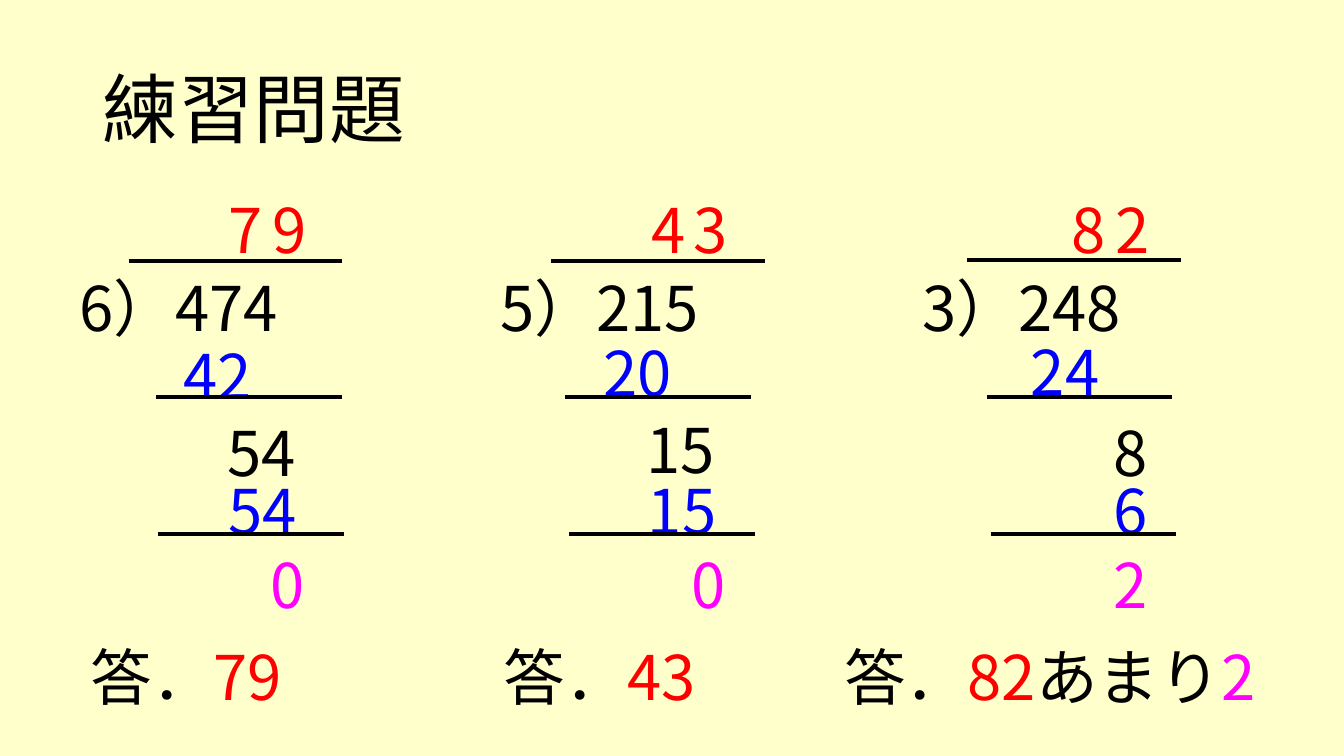
from dataclasses import dataclass

from lxml import etree
from pptx import Presentation
from pptx.dml.color import RGBColor
from pptx.enum import shapes, text
from pptx.oxml import ns
from pptx.util import Cm, Pt


@dataclass(frozen=True)
class Theme:
    font: str = "Noto Sans CJK JP"
    paper: str = "FFFFCC"
    ink: str = "000000"
    quotient: str = "FF0000"
    product: str = "0000FF"
    remainder: str = "FF00FF"
    title_size: int = 54
    work_size: int = 44
    rule_width: int = 3


THEME = Theme()
BOX_HEIGHT = 2.82
COLUMN_LEFT, COLUMN_PITCH = 1.75, 10.62
QUOTIENT_TOP, DIVIDEND_TOP, SECOND_PRODUCT_TOP = 3.78, 5.74, 10.87
REMAINDER_TOP, ANSWER_TOP = 12.73, 15.04
RULE_LENGTHS = (5.38, 4.67, 4.67)

PROBLEMS = [
    {
        "division": "6）474",
        "quotient": [("7", 5.51), ("9", 6.63)],
        "product": ("42", 4.37, 7.47),
        "difference": ("54", 5.49, 9.4),
        "second_product": ("54", 5.51),
        "remainder": ("0", 6.58),
        "rules": [(3.25, 6.58), (3.94, 10.01), (3.99, 13.46)],
        "answer": (2.03, 5.94, [("79", THEME.quotient)]),
    },
    {
        "division": "5）215",
        "quotient": [("4", 16.18), ("3", 17.22)],
        "product": ("20", 14.96, 7.39),
        "difference": ("15", 16.05, 9.32),
        "second_product": ("15", 16.08),
        "remainder": ("0", 17.17),
        "rules": [(13.89, 6.58), (14.25, 10.01), (14.35, 13.46)],
        "answer": (12.45, 5.92, [("43", THEME.quotient)]),
    },
    {
        "division": "3）248",
        "quotient": [("8", 26.75), ("2", 27.86)],
        "product": ("24", 25.73, 7.37),
        "difference": ("8", 27.81, 9.4),
        "second_product": ("6", 27.81),
        "remainder": ("2", 27.81),
        "rules": [(24.38, 6.55), (24.87, 10.01), (24.97, 13.46)],
        "answer": (21.03, 12.5, [("82", THEME.quotient), ("あまり", THEME.ink),
                                 ("2", THEME.remainder)]),
    },
]


def apply(target, values):
    for name, value in values.items():
        setattr(target, name, value)


def write_runs(p, runs, size):
    for content, color in runs:
        r = p.add_run()
        r.text = content
        apply(r.font, {"name": THEME.font, "size": Pt(size)})
        r.font.color.rgb = RGBColor.from_string(color)
        ea = etree.SubElement(r.font._element, ns.qn("a:ea"))
        ea.set("typeface", THEME.font)


def add_title(s, content):
    sp = s.shapes.title
    apply(sp, {"left": Cm(2.33), "top": Cm(1.01), "width": Cm(29.21), "height": Cm(3.68)})
    tf = sp.text_frame
    apply(tf, {"vertical_anchor": text.MSO_ANCHOR.MIDDLE, "word_wrap": True})
    p = tf.paragraphs[0]
    apply(p, {"alignment": text.PP_ALIGN.LEFT, "line_spacing": 0.9})
    write_runs(p, [(content, THEME.ink)], THEME.title_size)


def add_work(s, left, top, width, runs):
    sp = s.shapes.add_textbox(Cm(left), Cm(top), Cm(width), Cm(BOX_HEIGHT))
    tf = sp.text_frame
    apply(tf, {"word_wrap": True, "auto_size": text.MSO_AUTO_SIZE.SHAPE_TO_FIT_TEXT})
    p = tf.paragraphs[0]
    p.line_spacing = 1.5
    write_runs(p, runs, THEME.work_size)


def add_digits(s, digits, left, top, color):
    add_work(s, left, top, 0.18 + 1.37 * len(digits), [(digits, color)])


def add_rule(s, left, top, length):
    rule = s.shapes.add_connector(
        shapes.MSO_CONNECTOR.STRAIGHT, Cm(left), Cm(top), Cm(left + length), Cm(top))
    rule.line.width = Pt(THEME.rule_width)
    rule.line.color.rgb = RGBColor.from_string(THEME.ink)
    etree.SubElement(rule._element.spPr, ns.qn("a:effectLst"))


def add_problem(s, left, problem):
    add_work(s, left, DIVIDEND_TOP, 6.65, [(problem["division"], THEME.ink)])
    for digit, x in problem["quotient"]:
        add_digits(s, digit, x, QUOTIENT_TOP, THEME.quotient)
    add_digits(s, *problem["product"], THEME.product)
    add_digits(s, *problem["difference"], THEME.ink)
    add_digits(s, *problem["second_product"], SECOND_PRODUCT_TOP, THEME.product)
    add_digits(s, *problem["remainder"], REMAINDER_TOP, THEME.remainder)
    for (x, y), length in zip(problem["rules"], RULE_LENGTHS):
        add_rule(s, x, y, length)
    x, width, runs = problem["answer"]
    add_work(s, x, ANSWER_TOP, width, [("答．", THEME.ink), *runs])


def main():
    prs = Presentation()
    apply(prs, {"slide_width": Cm(33.87), "slide_height": Cm(19.05)})
    s = prs.slides.add_slide(prs.slide_layouts.get_by_name("Title Only"))
    s.background.fill.solid()
    s.background.fill.fore_color.rgb = RGBColor.from_string(THEME.paper)
    add_title(s, "練習問題")
    for i, problem in enumerate(PROBLEMS):
        add_problem(s, COLUMN_LEFT + i * COLUMN_PITCH, problem)
    prs.save("out.pptx")


if __name__ == "__main__":
    main()
